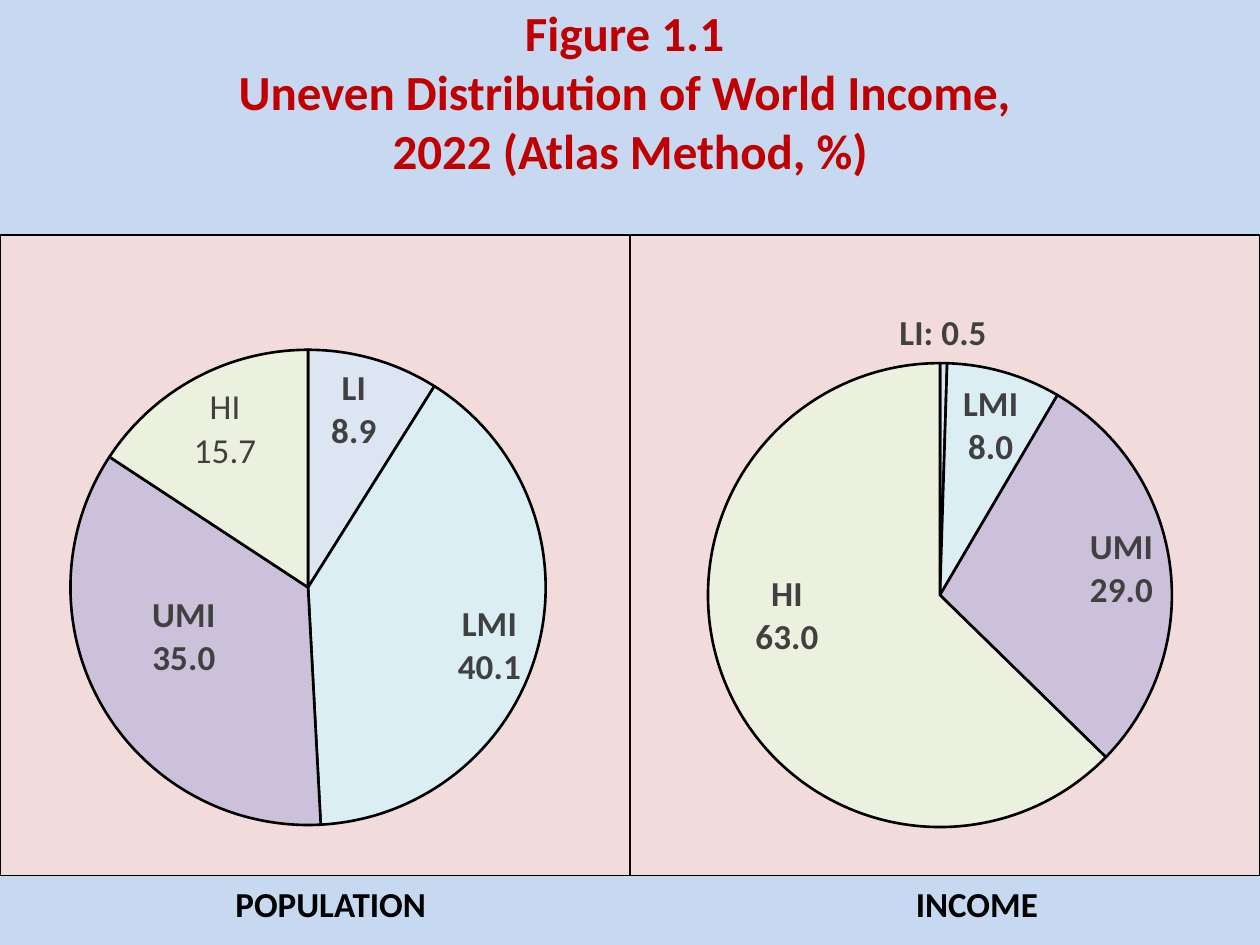
from dataclasses import dataclass
from itertools import accumulate
from math import cos, pi, sin

from lxml.etree import SubElement
from pptx import Presentation
from pptx.chart.data import CategoryChartData
from pptx.dml.color import RGBColor as RGB
from pptx.enum.chart import XL_CHART_TYPE as CT, XL_LABEL_POSITION as LP
from pptx.enum.shapes import MSO_SHAPE as SHP
from pptx.enum.text import MSO_ANCHOR as ANC, PP_ALIGN as AL
from pptx.oxml import parse_xml
from pptx.oxml.ns import nsdecls, qn
from pptx.util import Inches, Pt


@dataclass(frozen=True)
class Theme:
    """Colours, type sizes and line widths."""
    font: str = "Calibri"
    band: str = "C6D9F1"
    panel: str = "F2DCDB"
    title: str = "C00000"
    label: str = "404040"
    ink: str = "000000"
    slices: tuple = ("DCE6F2", "DBEEF4", "CCC1DA", "EBF1DE")
    title_pt: int = 28
    label_pt: int = 20
    slice_line: float = 1.5
    panel_line: float = 0.75


T = Theme()
W, H = 10, 7.5
TITLE_H, FOOT_Y = 0.248 * H, 0.927 * H
EDGE_GAP = 0.06

PIES = [
    dict(caption="POPULATION", caption_x=0.177, caption_w=0.22,
         plot=(0.111, 0.179, 0.756, 0.743),
         values=(8.9, 40.1, 35, 15.7),
         labels=[("LI\n8.9", (0.562, 0.273), True),
                 ("LMI\n40.1", (0.776, 0.64), True),
                 ("UMI\n35.0", (0.294, 0.627), True),
                 ("HI\n15.7", (0.359, 0.304), False)]),
    dict(caption="INCOME", caption_x=0.717, caption_w=0.143,
         plot=(0.123, 0.2, 0.738, 0.725),
         values=(0.5, 8, 29, 63),
         labels=[("LI: 0.5", (0.497, 0.154), True),
                 ("LMI\n8.0", (0.565, 0.298), True),
                 ("UMI\n29.0", (0.779, 0.521), True),
                 ("HI\n63.0", (0.251, 0.593), True)]),
]


def set_font(font, size, color, bold=True):
    """Apply the theme face with a size, colour and weight."""
    for key, val in dict(name=T.font, size=Pt(size), bold=bold).items():
        setattr(font, key, val)
    font.color.rgb = RGB.from_string(color)


def add_band(s, box):
    """Draw a plain coloured band across the given box."""
    sp = s.shapes.add_shape(SHP.RECTANGLE, *map(Inches, box))
    sp.shadow.inherit = False
    sp.fill.solid()
    sp.fill.fore_color.rgb = RGB.from_string(T.band)
    sp.line.fill.background()
    return sp


def add_title(s, box, text):
    """Draw the title band with its lines set from the top."""
    tf = add_band(s, box).text_frame
    fmt = dict(word_wrap=True, vertical_anchor=ANC.TOP, margin_top=Inches(0.02))
    for key, val in fmt.items():
        setattr(tf, key, val)
    p = tf.paragraphs[0]
    p.text, p.alignment = text, AL.CENTER
    for r in p.runs:
        set_font(r.font, T.title_pt, T.title)


def add_caption(s, box, text):
    """Place a chart's caption in the given box."""
    tf = s.shapes.add_textbox(*map(Inches, box)).text_frame
    tf.word_wrap = True
    r = tf.paragraphs[0].add_run()
    r.text = text
    set_font(r.font, T.label_pt, T.ink)


def add_layout(parent, index, **vals):
    """Insert a manual chart layout into a chart element."""
    old = parent.find(qn("c:layout"))
    if old is not None:
        parent.remove(old)
    layout = parse_xml(f"<c:layout {nsdecls('c')}><c:manualLayout/></c:layout>")
    for key, val in vals.items():
        SubElement(layout[0], qn(f"c:{key}")).set("val", str(val))
    parent.insert(index, layout)


def label_offset(box, plot, angle, text, target):
    """Return the shift from the outside-end place to the target centre."""
    _, _, w, h = box
    px, py, pw, ph = plot
    lines = text.split("\n")
    size = (max(map(len, lines)) * 0.12, len(lines) * 0.34)
    radius = min(pw * w, ph * h) / 2 + EDGE_GAP
    ways = (sin(angle), -cos(angle))
    centre = ((px + pw / 2) * w, (py + ph / 2) * h)
    start = [c + radius * d + (0 if abs(d) < 0.08 else size_i / 2 * d / abs(d))
             for c, d, size_i in zip(centre, ways, size)]
    return [round(t - a / full, 3) for t, a, full in zip(target, start, (w, h))]


def add_label(point, text, bold, offset):
    """Write one slice label and shift it to its place."""
    dl = point.data_label
    tf = dl.text_frame
    tf.text = text
    for p in tf.paragraphs:
        for r in p.runs:
            set_font(r.font, T.label_pt, T.label, bold)
    dl.position = LP.OUTSIDE_END
    rich = tf.paragraphs[0]._p.getparent()
    add_layout(rich.getparent().getparent(), 1, x=offset[0], y=offset[1])


def add_pie(s, box, pie):
    """Draw a pie chart panel in the given box."""
    data = CategoryChartData(number_format="0.0")
    data.categories = ["1", "2", "3", "4"]
    data.add_series("Series 1", pie["values"])
    chart = s.shapes.add_chart(CT.PIE, *map(Inches, box), data).chart
    chart.has_legend = chart.has_title = False
    set_font(chart.font, 10, T.ink, False)
    root = chart.element
    root.find(qn("c:chart")).addnext(parse_xml(
        f'<c:spPr {nsdecls("c", "a")}>'
        f'<a:solidFill><a:srgbClr val="{T.panel}"/></a:solidFill>'
        f'<a:ln w="{Pt(T.panel_line)}"><a:solidFill><a:srgbClr val="{T.ink}"/>'
        '</a:solidFill></a:ln></c:spPr>'))
    add_layout(next(root.iter(qn("c:plotArea"))), 0, layoutTarget="inner",
               xMode="edge", yMode="edge", **dict(zip("xywh", pie["plot"])))
    plot = chart.plots[0]
    plot.vary_by_categories = True
    ser = plot.series[0]
    fmt = dict(show_value=True, number_format="0.0", number_format_is_linked=False)
    for key, val in fmt.items():
        setattr(ser.data_labels, key, val)
    set_font(ser.data_labels.font, T.label_pt, T.label)
    total, ends = sum(pie["values"]), accumulate(pie["values"])
    rows = zip(pie["values"], ends, T.slices, pie["labels"])
    for i, (val, end, color, (text, target, bold)) in enumerate(rows):
        point = ser.points[i]
        point.format.fill.solid()
        point.format.fill.fore_color.rgb = RGB.from_string(color)
        point.format.line.color.rgb = RGB.from_string(T.ink)
        point.format.line.width = Pt(T.slice_line)
        angle = 2 * pi * (end - val / 2) / total
        add_label(point, text, bold,
                  label_offset(box, pie["plot"], angle, text, target))
    for el in root.iter(qn("c:showLeaderLines")):
        el.set("val", "0")


def main():
    """Build the slide and save it."""
    prs = Presentation()
    prs.slide_width, prs.slide_height = Inches(W), Inches(H)
    s = prs.slides.add_slide(prs.slide_layouts[6])
    add_title(s, (0, 0, W, TITLE_H),
              "Figure 1.1 \vUneven Distribution of World Income, \v"
              "2022 (Atlas Method, %)")
    add_band(s, (0, FOOT_Y, W, H - FOOT_Y))
    col = W / len(PIES)
    for i, pie in enumerate(PIES):
        add_caption(s, (pie["caption_x"] * W, FOOT_Y, pie["caption_w"] * W, 0.44),
                    pie["caption"])
        add_pie(s, (i * col, TITLE_H, col, FOOT_Y - TITLE_H), pie)
    prs.save("out.pptx")


if __name__ == "__main__":
    main()
